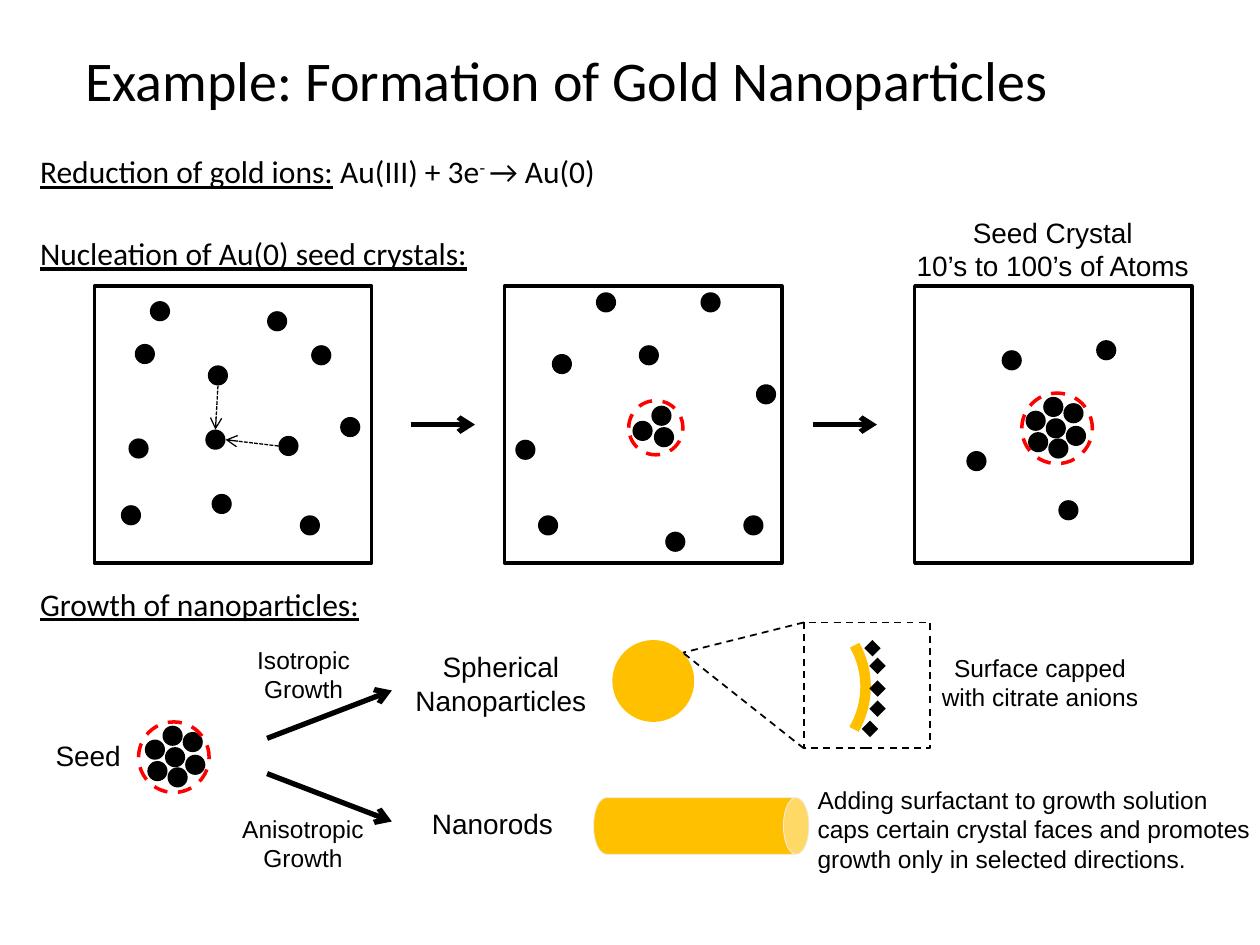
from lxml import etree
from pptx import Presentation
from pptx.dml.color import RGBColor
from pptx.enum.dml import MSO_LINE
from pptx.enum.shapes import MSO_CONNECTOR, MSO_SHAPE
from pptx.enum.text import MSO_ANCHOR, PP_ALIGN
from pptx.oxml.ns import qn
from pptx.util import Inches, Pt

COLORS = {"black": "000000", "red": "FF0000", "gold": "FFC000", "cream": "EEECE1"}
ATOM = 0.16
DIAMOND = 0.13

prs = Presentation()
prs.slide_width, prs.slide_height = Inches(10), Inches(7.5)
slide = prs.slides.add_slide(prs.slide_layouts[6])


def add_shape(kind, x, y, w, h, fill=None, line=None, width=1, dash=None):
    s = slide.shapes.add_shape(kind, Inches(x), Inches(y), Inches(w), Inches(h))
    s.shadow.inherit = False
    if fill:
        s.fill.solid()
        s.fill.fore_color.rgb = RGBColor.from_string(COLORS[fill])
    else:
        s.fill.background()
    if line:
        s.line.color.rgb = RGBColor.from_string(COLORS[line])
        s.line.width = Pt(width)
        s.line.dash_style = dash
    else:
        s.line.fill.background()
    return s


def add_line(x1, y1, x2, y2, width, dash=None, arrow=True):
    s = slide.shapes.add_connector(
        MSO_CONNECTOR.STRAIGHT, Inches(x1), Inches(y1), Inches(x2), Inches(y2))
    s.line.color.rgb = RGBColor.from_string(COLORS["black"])
    s.line.width = Pt(width)
    s.line.dash_style = dash
    if arrow:
        etree.SubElement(s.line._get_or_add_ln(), qn("a:tailEnd"), type="arrow")
    etree.SubElement(s._element.spPr, qn("a:effectLst"))


# Atoms: free and clustered, by stage
seed_atoms = [(8.44, 3.2), (8.28, 3.15), (8.3, 3.32), (8.16, 3.43),
              (8.14, 3.26), (8.46, 3.38), (8.32, 3.48)]
atoms = [
    # Separate atoms
    (1.19, 2.39), (2.47, 2.74), (1.65, 2.9), (2.21, 3.46), (1.68, 3.92), (1.02, 3.48),
    (1.63, 3.41), (1.07, 2.73), (2.12, 2.47), (2.7, 3.31), (0.96, 4.01), (2.38, 4.09),
    # First cluster
    (4.73, 2.32), (5.07, 2.74), (5.17, 3.22), (5.19, 3.39), (5.28, 4.22), (4.09, 3.49),
    (5.02, 3.34), (4.38, 2.81), (5.56, 2.32), (6, 3.05), (4.27, 4.09), (5.9, 4.09),
    # Seed crystal
    (7.95, 2.78), (8.4, 3.97), (8.7, 2.7), (7.67, 3.58),
] + seed_atoms
atoms += [(x - 6.99, y + 2.61) for x, y in seed_atoms]
for x, y in atoms:
    add_shape(MSO_SHAPE.OVAL, x, y, ATOM, ATOM, fill="black")

# Red rings around the clusters
for x, y, size in [(4.99, 3.18, 0.43), (8.11, 3.12, 0.56), (1.1, 5.73, 0.56)]:
    add_shape(MSO_SHAPE.OVAL, x, y, size, size, line="red", width=2, dash=MSO_LINE.DASH)

# Stage boxes
for i in range(3):
    add_shape(MSO_SHAPE.RECTANGLE, 0.75 + 3.255 * i, 2.27, 2.2, 2.2, line="black", width=2)

# Attraction arrows, then stage and growth arrows
for ends in [(1.73, 3.06, 1.71, 3.41), (2.21, 3.54, 1.79, 3.49)]:
    add_line(*ends, 0.75, MSO_LINE.SQUARE_DOT)
for ends in [(3.26, 3.37, 3.77, 3.37), (6.45, 3.37, 6.96, 3.37),
             (2.12, 5.86, 3.11, 5.48), (2.12, 6.14, 3.11, 6.52)]:
    add_line(*ends, 3)

# Nanorod
s = add_shape(MSO_SHAPE.CAN, 5.34, 5.7, 0.45, 1.71, fill="gold", line="cream", width=0.5)
s.adjustments[0] = 0.45
s.rotation = 90

# Spherical particle with its enlarged, citrate-capped surface
s = add_shape(MSO_SHAPE.ARC, 5.44, 4.76, 1.43, 1.38, line="gold", width=6)
s.adjustments[0], s.adjustments[1] = 199.43, 17.11
add_shape(MSO_SHAPE.OVAL, 4.86, 5.08, 0.65, 0.65, fill="gold")
for x, y in [(6.86, 5.08), (6.9, 5.22), (6.9, 5.4), (6.9, 5.56), (6.84, 5.72)]:
    add_shape(MSO_SHAPE.DIAMOND, x, y, DIAMOND, DIAMOND, fill="black")
add_shape(MSO_SHAPE.RECTANGLE, 6.38, 4.94, 1, 1, line="black", dash=MSO_LINE.DASH)
for y in (4.94, 5.94):
    add_line(6.38, y, 5.42, 5.18, 1, MSO_LINE.DASH, arrow=False)

# Texts: box, font, size, alignment, paragraphs of (text, style) runs
LEFT, CENTER = PP_ALIGN.LEFT, PP_ALIGN.CENTER
texts = [
    ((0, 0, 9, 1.25), "Calibri", 32, CENTER,
     [[("Example: Formation of Gold Nanoparticles", "")]]),
    ((0.22, 1.16, 5.13, 0.4), "Calibri", 18, LEFT,
     [[("Reduction of gold ions:", "underline"), (" Au(III) + 3e", ""),
       ("- ", "super"), ("→ Au(0)", "")]]),
    ((0.22, 1.81, 3.96, 0.4), "Calibri", 18, LEFT,
     [[("Nucleation of Au(0) seed crystals:", "underline")]]),
    ((0.22, 4.59, 2.94, 0.4), "Calibri", 18, LEFT,
     [[("Growth of nanoparticles:", "underline")]]),
    ((7.16, 1.66, 2.39, 0.64), "Arial", 16, CENTER,
     [[("Seed Crystal", "")], [("10’s to 100’s of Atoms", "")]]),
    ((0.34, 5.81, 0.72, 0.37), "Arial", 16, CENTER, [[("Seed", "")]]),
    ((3.33, 6.35, 1.17, 0.37), "Arial", 16, LEFT, [[("Nanorods", "")]]),
    ((3.19, 5.11, 1.57, 0.64), "Arial", 16, CENTER,
     [[("Spherical", "")], [("Nanoparticles", "")]]),
    ((1.94, 5.07, 0.94, 0.57), "Arial", 14, CENTER,
     [[("Isotropic", "")], [("Growth", "")]]),
    ((1.82, 6.41, 1.17, 0.57), "Arial", 14, CENTER,
     [[("Anisotropic", "")], [("Growth", "")]]),
    ((7.37, 5.13, 1.77, 0.57), "Arial", 14, CENTER,
     [[("Surface capped", "")], [("with citrate anions", "")]]),
    ((6.39, 6.18, 3.65, 0.81), "Arial", 14, LEFT,
     [[("Adding surfactant to growth solution", "")],
      [("caps certain crystal faces and promotes", "")],
      [("growth only in selected directions.", "")]]),
]
for box, font, size, align, paragraphs in texts:
    tf = slide.shapes.add_textbox(*[Inches(v) for v in box]).text_frame
    tf.word_wrap = False
    if size == 32:
        tf.vertical_anchor = MSO_ANCHOR.MIDDLE
    for i, runs in enumerate(paragraphs):
        p = tf.add_paragraph() if i else tf.paragraphs[0]
        p.alignment = align
        for text, style in runs:
            r = p.add_run()
            r.text = text
            r.font.name, r.font.size = font, Pt(size)
            r.font.color.rgb = RGBColor.from_string(COLORS["black"])
            if style == "underline":
                r.font.underline = True
            elif style == "super":
                r.font._element.set("baseline", "30000")

prs.save("out.pptx")
